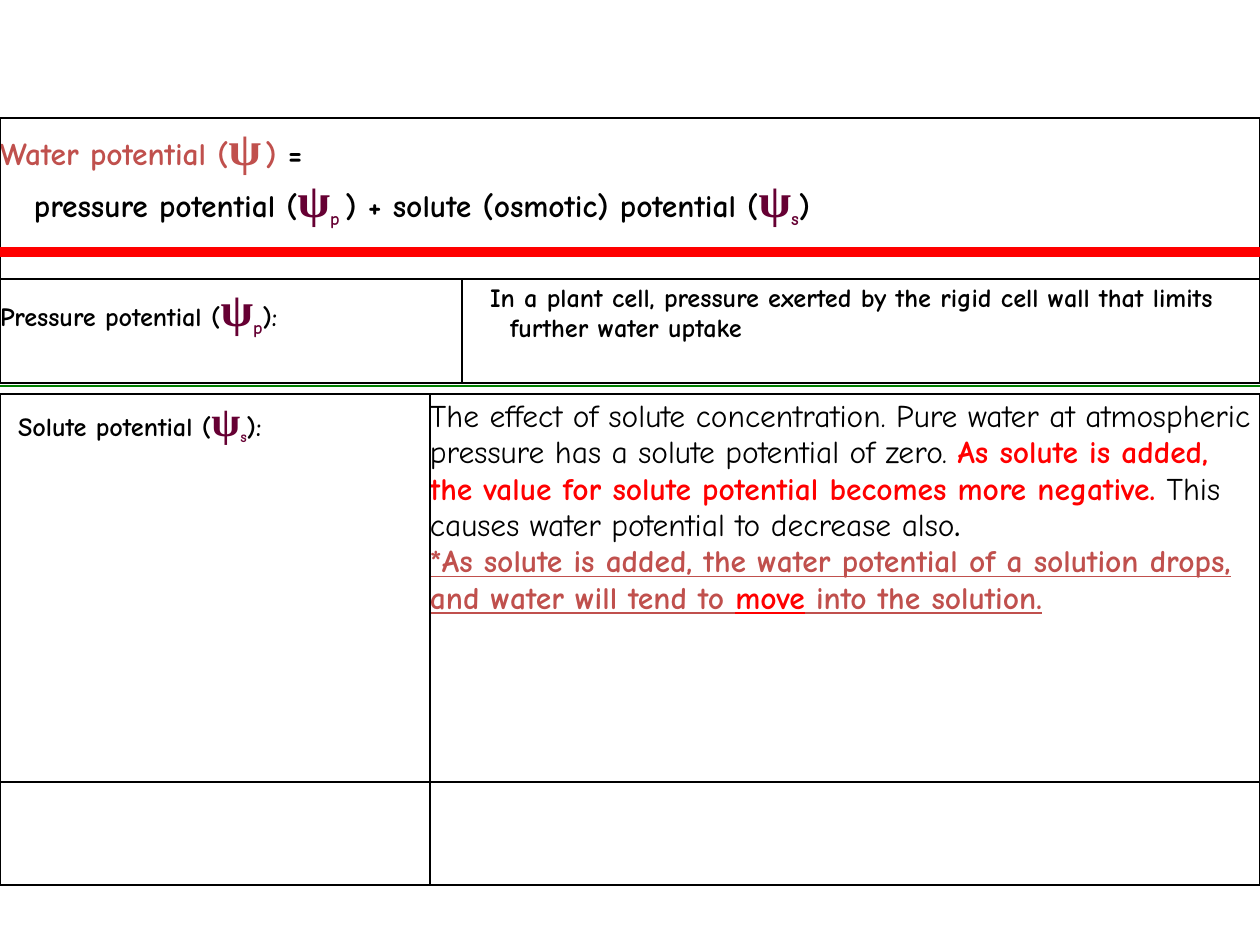
from lxml.etree import SubElement
from pptx import Presentation
from pptx.dml.color import RGBColor
from pptx.enum.shapes import MSO_CONNECTOR
from pptx.oxml.ns import qn
from pptx.util import Pt

PX = 914400 // 126
BLACK = RGBColor(0x00, 0x00, 0x00)
BRICK = RGBColor(0xC0, 0x50, 0x4D)
PLUM = RGBColor(0x66, 0x00, 0x33)
RED = RGBColor(0xFF, 0x00, 0x00)
GREEN = RGBColor(0x00, 0x80, 0x00)
FONT, GREEK = "Comic Neue", "Times New Roman"


def run(text, size=18, color=BLACK, **style):
    return dict(text=text, size=size, color=color, **style)


def psi(size=27, color=PLUM):
    return run("ψ", size, color, font=GREEK)


def sub(text, size=18):
    return run(text, size, PLUM, baseline=-25000)


# A paragraph is (left margin px, first-line indent px, runs).
EQUATION = [
    (0, 0, [run("Water potential (", color=BRICK), psi(color=BRICK),
            run(" ", 7, BRICK), run(")", color=BRICK), run(" =")]),
    (34, 0, [run("pressure potential ("), psi(), sub("p"), run(" ", 9),
             run(") + solute (osmotic) potential ("), psi(), sub("s"), run(")")]),
]
PRESSURE_TERM = [(0, 0, [run("Pressure potential (", 15), psi(), sub("p"), run("):", 15)])]
PRESSURE_MEANING = [
    (48, -20, [run("In a plant cell, pressure exerted by the rigid cell wall "
                   "that limits further water uptake", 15)]),
]
SOLUTE_TERM = [(18, 0, [run("Solute potential (", 15), psi(24), sub("s", 15), run("):", 15)])]
SOLUTE_MEANING = [
    (0, 0, [run("The effect of solute concentration. Pure water at atmospheric "
                "pressure has a solute potential of zero. ", bold=False),
            run("As solute is added, the value for solute potential becomes "
                "more negative. ", color=RED),
            run("This causes water potential to decrease also", bold=False),
            run(".")]),
    (0, 0, [run("*As solute is added, the water potential of a solution drops, "
                "and water will tend to ", color=BRICK, underline=True),
            run("move", color=RED, underline=True),
            run(" into the solution.", color=BRICK, underline=True)]),
]

# top, column widths, row heights (px), rows of cells
TABLES = [
    (118, (462, 798), (161, 104), [[EQUATION, []], [PRESSURE_TERM, PRESSURE_MEANING]]),
    (394, (430, 830), (388, 103), [[SOLUTE_TERM, SOLUTE_MEANING], [[], []]]),
]
RULES = [(252, RED, 6), (386, GREEN, 1.5)]  # y px, colour, points


def add_run(p, text, size, color, font=FONT, bold=True, underline=False, baseline=0):
    r = p.add_run()
    r.text = text
    r.font.size, r.font.name = Pt(size), font
    r.font.bold, r.font.underline = bold, underline
    r.font.color.rgb = color
    if baseline:
        r.font._element.set("baseline", str(baseline))


def fill_cell(cell, paragraphs):
    cell.margin_left = cell.margin_right = 0
    cell.margin_top = cell.margin_bottom = 5 * PX
    for i, (margin, indent, runs) in enumerate(paragraphs):
        tf = cell.text_frame
        p = tf.add_paragraph() if i else tf.paragraphs[0]
        pPr = p._p.get_or_add_pPr()
        pPr.set("marL", str(margin * PX))
        pPr.set("indent", str(indent * PX))
        for part in runs:
            add_run(p, **part)


def add_borders(cell):
    tcPr = cell._tc.get_or_add_tcPr()
    for side in ("a:lnL", "a:lnR", "a:lnT", "a:lnB"):
        ln = SubElement(tcPr, qn(side), w=str(Pt(1)))
        solid = SubElement(ln, qn("a:solidFill"))
        SubElement(solid, qn("a:srgbClr"), val=str(BLACK))


def add_grid(slide, top, widths, heights, rows):
    table = slide.shapes.add_table(len(heights), len(widths), 0, top * PX,
                                   sum(widths) * PX, sum(heights) * PX).table
    table.first_row = table.horz_banding = False
    for column, width in zip(table.columns, widths):
        column.width = width * PX
    for row, height, contents in zip(table.rows, heights, rows):
        row.height = height * PX
        for cell, paragraphs in zip(row.cells, contents):
            fill_cell(cell, paragraphs)
            add_borders(cell)
            cell.fill.background()
    return table


def add_rule(slide, y, color, weight):
    line = slide.shapes.add_connector(MSO_CONNECTOR.STRAIGHT, 0, y * PX, 1260 * PX, y * PX)
    line.line.color.rgb = color
    line.line.width = Pt(weight)
    SubElement(line._element.spPr, qn("a:effectLst"))


def main():
    prs = Presentation()
    prs.slide_width, prs.slide_height = 1260 * PX, 945 * PX
    slide = prs.slides.add_slide(prs.slide_layouts[6])
    equation_table, _ = [add_grid(slide, *spec) for spec in TABLES]
    equation_table.cell(0, 0).merge(equation_table.cell(0, 1))
    for rule in RULES:
        add_rule(slide, *rule)
    prs.save("out.pptx")


if __name__ == "__main__":
    main()
